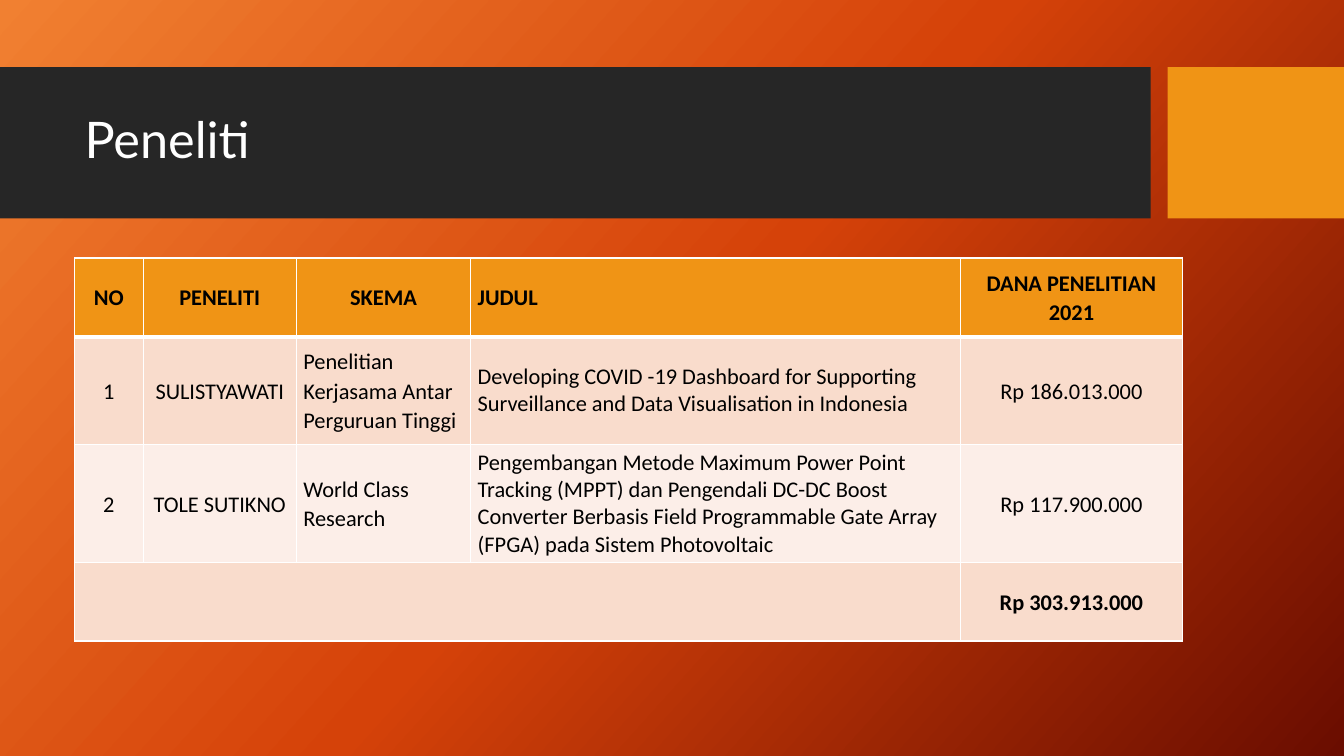
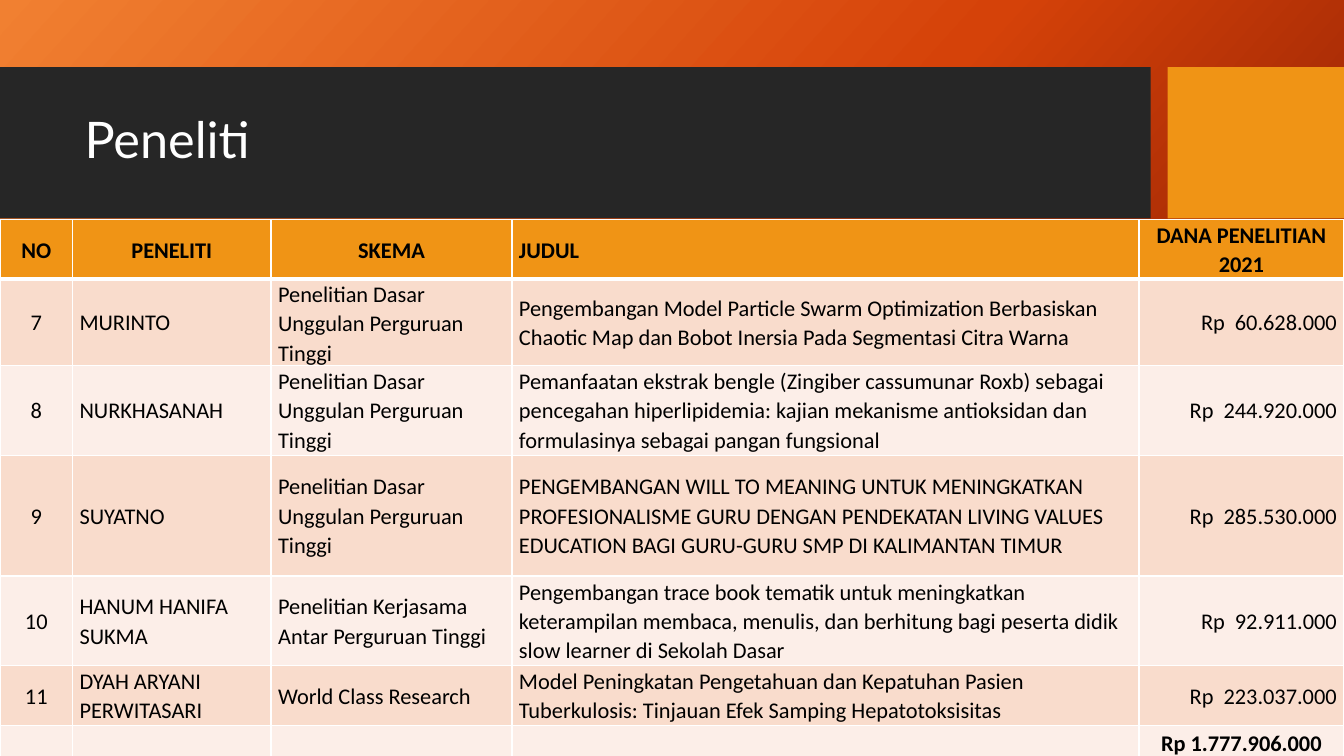
from copy import deepcopy
from dataclasses import dataclass

from lxml import etree
from pptx import Presentation, util as u
from pptx.dml.color import RGBColor
from pptx.enum import shapes, text
from pptx.oxml.ns import qn

COLS, ROWS = 80, 45  # grid units of one sixth of an inch
UNIT = u.Inches(1) // 6
ALIGN = {"l": text.PP_ALIGN.LEFT, "c": text.PP_ALIGN.CENTER, "r": text.PP_ALIGN.RIGHT}


@dataclass(frozen=True)
class Theme:
    glow: tuple = ((0, "F18031"), (50, "D54209"), (100, "6A0D00"))
    angle: int = 42
    band: str = "262626"
    accent: str = "F09415"
    stripes: tuple = ("F9DCCC", "FCEEE8")
    ink: str = "000000"
    light: str = "FFFFFF"
    head: str = "Lato"
    body: str = "Calibri"
    big: int = 36
    small: int = 16
    thin: int = 1
    thick: int = 3


T = Theme()


def grid(*units):
    return [round(n * UNIT) for n in units]


def rgb(code):
    return RGBColor.from_string(code)


def add_run(para, words, face, size, tint, bold=False):
    run = para.add_run()
    run.text = words
    font = run.font
    font.name, font.size, font.bold = face, u.Pt(size), bold
    font.color.rgb = rgb(tint)


def add_back(slide):
    fill = slide.background.fill
    fill.gradient()
    fill.gradient_angle = 360 - T.angle
    stops = slide._element.find(".//" + qn("a:gsLst"))
    stops.append(deepcopy(stops[-1]))
    for stop, (pos, tint) in zip(fill.gradient_stops, T.glow):
        stop.position = pos / 100
        stop.color.rgb = rgb(tint)


def add_block(slide, tint, *area):
    block = slide.shapes.add_shape(shapes.MSO_SHAPE.RECTANGLE, *grid(*area))
    block.shadow.inherit = False
    block.fill.solid()
    block.fill.fore_color.rgb = rgb(tint)
    block.line.fill.background()


def add_title(slide, words):
    frame = slide.shapes.add_textbox(*grid(4.44, 4.92, 63.06, 7.08)).text_frame
    frame.word_wrap = True
    frame.vertical_anchor = text.MSO_ANCHOR.MIDDLE
    para = frame.paragraphs[0]
    para.line_spacing = 0.9
    add_run(para, words, T.head, T.big, T.light)


def add_page(deck, title):
    """Add a slide with the shared backdrop, bands and title."""
    slide = deck.slides.add_slide(deck.slide_layouts[6])
    add_back(slide)
    add_block(slide, T.band, 0, 4, 68.5, 9)
    add_block(slide, T.accent, 69.5, 4, 10.5, 9)
    add_title(slide, title)
    return slide


def add_edges(cell, row):
    """Draw thin cell edges, thick between the header and the body."""
    props = cell._tc.get_or_add_tcPr()
    for side in "LRTB":
        heavy = (row, side) in ((0, "B"), (1, "T"))
        width = u.Pt(T.thick if heavy else T.thin)
        line = etree.SubElement(props, qn("a:ln" + side), w=str(width))
        fill = etree.SubElement(line, qn("a:solidFill"))
        etree.SubElement(fill, qn("a:srgbClr"), val=T.light)


def fill_cell(cell, words, align, bold, spaced=True):
    cell.vertical_anchor = text.MSO_ANCHOR.MIDDLE
    cell.margin_left = cell.margin_right = u.Inches(0.07)
    cell.margin_top = cell.margin_bottom = 0
    para = cell.text_frame.paragraphs[0]
    para.alignment = ALIGN[align]
    if spaced:
        para.line_spacing = 1.07
        para.space_after = u.Pt(8)
    add_run(para, words, T.body, T.small, T.ink, bold)


def add_sheet(slide, left, top, wide, high, data, aligns, tight=()):
    """Add a table under the common header; tight lists columns without spacing."""
    head = ("NO", "PENELITI", "SKEMA", "JUDUL", "DANA PENELITIAN 2021")
    area = grid(left, top, sum(wide), sum(high))
    table = slide.shapes.add_table(len(high), len(wide), *area).table
    table.horz_banding = False
    for col, width in zip(table.columns, grid(*wide)):
        col.width = width
    for row, height in zip(table.rows, grid(*high)):
        row.height = height
    for r in range(len(high)):
        tint = T.stripes[(r - 1) % 2] if r else T.accent
        for c in range(len(wide)):
            cell = table.cell(r, c)
            add_edges(cell, r)
            cell.fill.solid()
            cell.fill.fore_color.rgb = rgb(tint)
    for r, line in enumerate((head, *data)):
        for c, words in enumerate(line):
            align = aligns[c] if r else "ccclc"[c]
            fill_cell(table.cell(r, c), words, align, r == 0, c not in tight)
    return table


def main():
    deck = Presentation()
    deck.slide_width, deck.slide_height = grid(COLS, ROWS)

    joint = "Penelitian Kerjasama Antar Perguruan Tinggi"
    basic = "Penelitian Dasar Unggulan Perguruan Tinggi"
    world = "World Class Research"

    first = add_sheet(
        add_page(deck, "Peneliti"), 4.44, 15.36,
        (4.08, 9.12, 10.38, 29.16, 13.2), (4.68, 6.42, 7.02, 4.68),
        (
            ("1", "SULISTYAWATI", joint,
             "Developing COVID -19 Dashboard for Supporting Surveillance and Data "
             "Visualisation in Indonesia", "Rp 186.013.000"),
            ("2", "TOLE SUTIKNO", world,
             "Pengembangan Metode Maximum Power Point Tracking (MPPT) dan Pengendali "
             "DC-DC Boost Converter Berbasis Field Programmable Gate Array (FPGA) pada "
             "Sistem Photovoltaic", "Rp 117.900.000"),
        ), "ccllc", tight=(3,))
    first.cell(3, 0).merge(first.cell(3, 3))
    fill_cell(first.cell(3, 4), "Rp 303.913.000", "c", True)

    second = add_sheet(
        add_page(deck, "Peneliti"), 0, 13.08,
        (4.32, 11.82, 14.34, 37.32, 12.2),
        (3.54, 3.54, 5.34, 7.2, 5.34, 3.54, 3.48),
        (
            ("7", "MURINTO", basic,
             "Pengembangan Model Particle Swarm Optimization Berbasiskan Chaotic Map "
             "dan Bobot Inersia Pada Segmentasi Citra Warna", "Rp  60.628.000"),
            ("8", "NURKHASANAH", basic,
             "Pemanfaatan ekstrak bengle (Zingiber cassumunar Roxb) sebagai pencegahan "
             "hiperlipidemia: kajian mekanisme antioksidan dan formulasinya sebagai "
             "pangan fungsional", "Rp  244.920.000"),
            ("9", "SUYATNO", basic,
             "PENGEMBANGAN WILL TO MEANING UNTUK MENINGKATKAN PROFESIONALISME GURU "
             "DENGAN PENDEKATAN LIVING VALUES EDUCATION BAGI GURU-GURU SMP DI "
             "KALIMANTAN TIMUR", "Rp  285.530.000"),
            ("10", "HANUM HANIFA SUKMA", joint,
             "Pengembangan trace book tematik untuk meningkatkan keterampilan membaca, "
             "menulis, dan berhitung bagi peserta didik slow learner di Sekolah Dasar",
             "Rp  92.911.000"),
            ("11", "DYAH ARYANI PERWITASARI", world,
             "Model Peningkatan Pengetahuan dan Kepatuhan Pasien Tuberkulosis: Tinjauan "
             "Efek Samping Hepatotoksisitas", "Rp  223.037.000"),
        ), "clllr")
    total = second.cell(6, 4)
    fill_cell(total, "Rp 1.777.906.000", "c", True, spaced=False)
    total.vertical_anchor = text.MSO_ANCHOR.TOP
    total.margin_top = u.Inches(0.05)

    deck.save("out.pptx")


if __name__ == "__main__":
    main()
